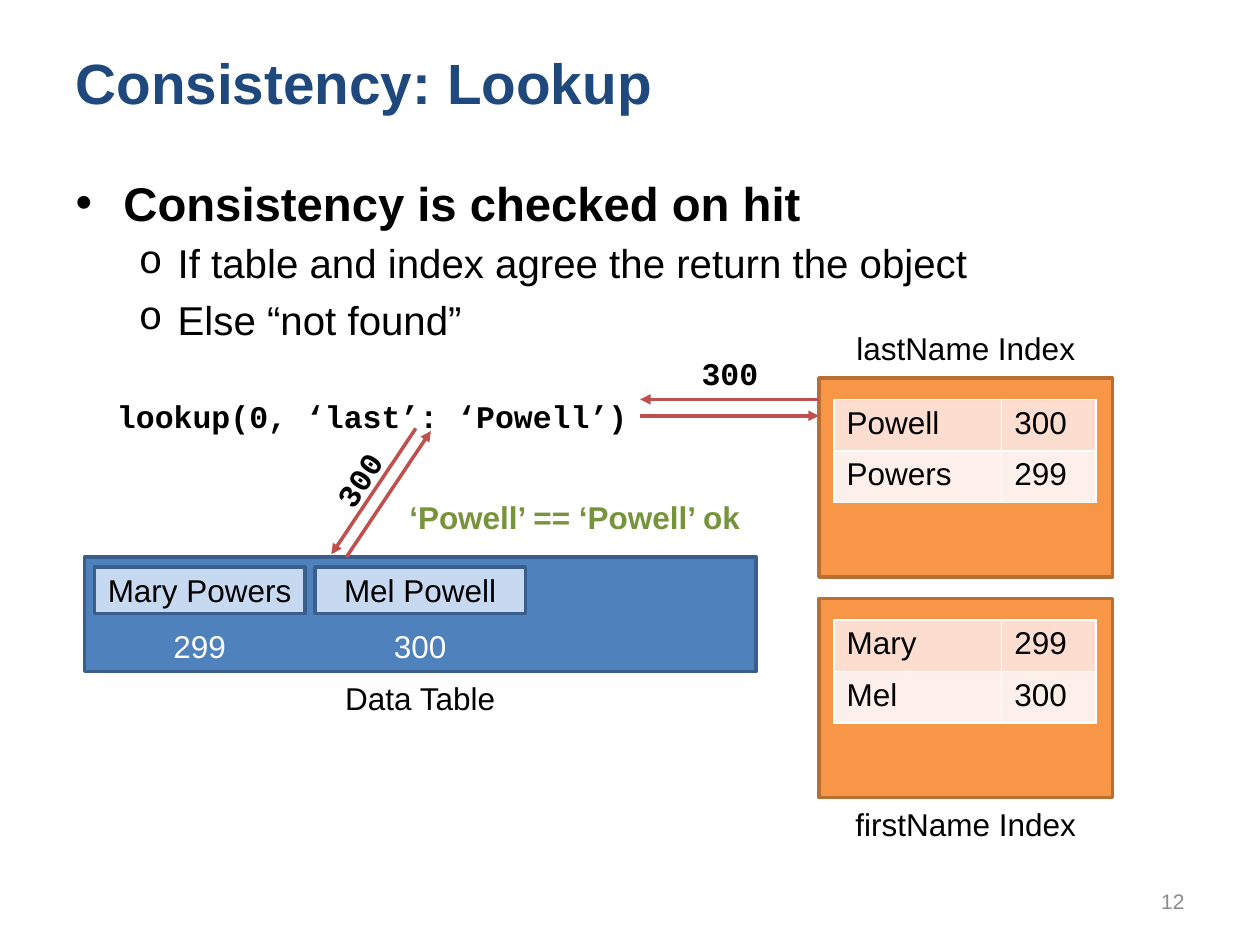
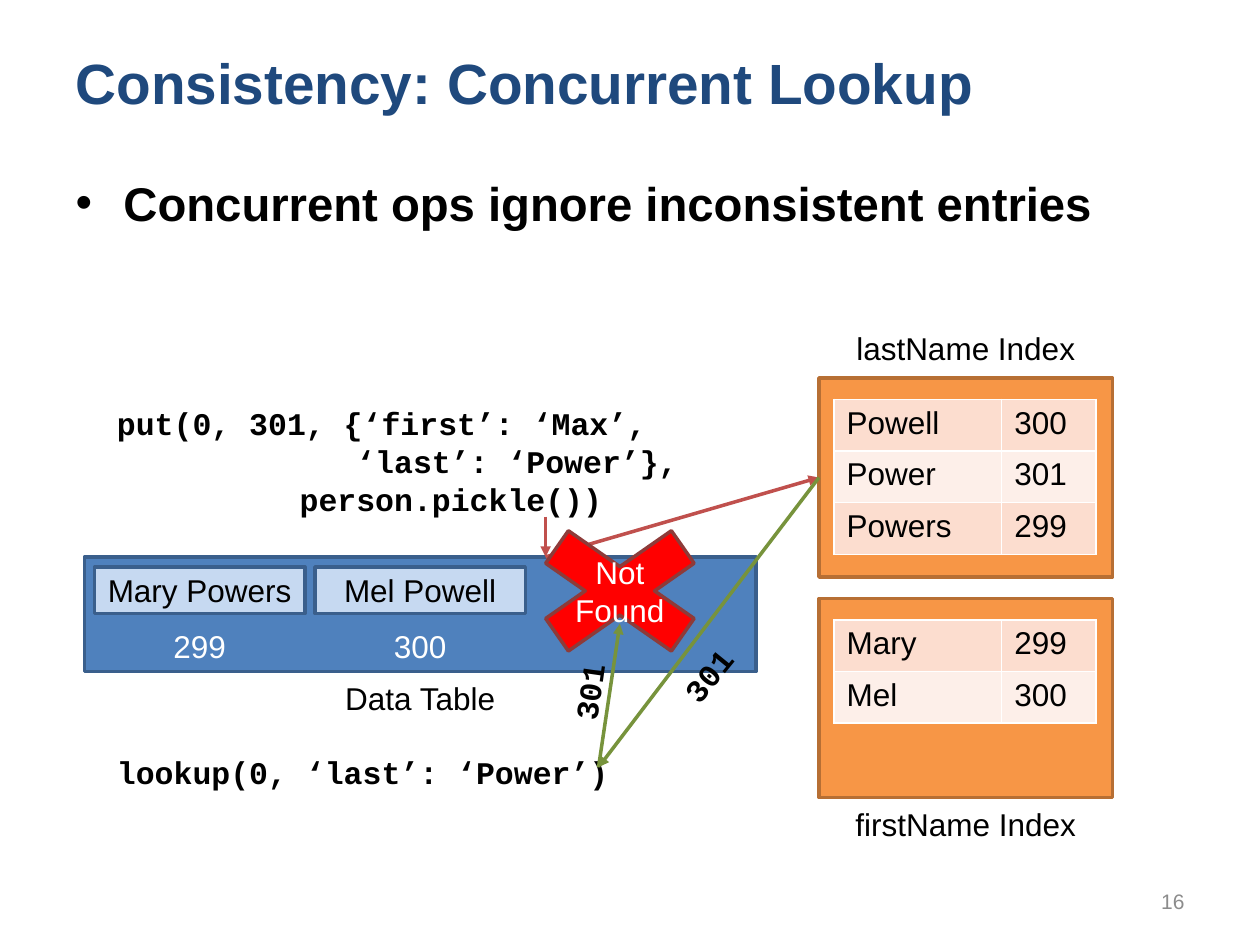
from lxml import etree
from pptx import Presentation
from pptx import util as u
from pptx.dml import color
from pptx.enum import shapes as sh, text as tx
from pptx.oxml import ns

SANS, MONO = "Arial", "Courier New"
NAVY, BLACK, WHITE, GREY = "1F497D", "000000", "FFFFFF", "8C8C8C"
BLUE, EDGE, PALE = "4F81BD", "3A5F8C", "C6D9F1"
ORANGE, RUST = "F79646", "B76F34"
RED, GREEN = "C0504D", "77933C"
BANDS = ["FCDDCF", "FDEFE9"]
LEFT, MID, RIGHT = tx.PP_ALIGN.LEFT, tx.PP_ALIGN.CENTER, tx.PP_ALIGN.RIGHT
PLAIN = {"name": SANS, "size": u.Pt(18), "bold": False}
CODE = {"name": MONO, "size": u.Pt(18), "bold": True}
LEVELS = [
    {"size": 27, "bold": True, "mark": "•", "left": 0.38, "hang": 0.38},
    {"size": 23, "bold": False, "mark": "o", "left": 0.81, "hang": 0.31},
]


def tint(part, hex_code):
    part.rgb = color.RGBColor.from_string(hex_code)


def apply(part, values):
    for key, value in values.items():
        setattr(part, key, value)


def place(part, box):
    sides = ("left", "top", "width", "height")
    apply(part, {side: u.Inches(n) for side, n in zip(sides, box)})


def paint(part, hex_code):
    part.fill.solid()
    tint(part.fill.fore_color, hex_code)


def ink(para, font, hex_code, align=LEFT):
    para.alignment = align
    for run in para.runs:
        apply(run.font, font)
        tint(run.font.color, hex_code)


def fill_text(part, words, font=PLAIN, hue=BLACK, align=LEFT, wrap=True,
              anchor=tx.MSO_ANCHOR.TOP):
    frame = part.text_frame
    apply(frame, {"text": words, "word_wrap": wrap, "vertical_anchor": anchor})
    for para in frame.paragraphs:
        ink(para, font, hue, align)


def label(parts, words, box, turn=0, **style):
    note = parts.add_textbox(*map(u.Inches, box))
    note.rotation = turn
    fill_text(note, words, **style)
    return note


def block(parts, box, fill, edge, words="", hue=BLACK,
          kind=sh.MSO_SHAPE.RECTANGLE):
    form = parts.add_shape(kind, *map(u.Inches, box))
    form.shadow.inherit = False
    paint(form, fill)
    tint(form.line.color, edge)
    form.line.width = u.Pt(2)
    if words:
        fill_text(form, words, hue=hue, align=MID, anchor=tx.MSO_ANCHOR.MIDDLE)


def arrow(parts, start, end, hue=RED):
    link = parts.add_connector(sh.MSO_CONNECTOR.STRAIGHT,
                               *map(u.Inches, start + end))
    tint(link.line.color, hue)
    link.line.width = u.Pt(2)
    props = link._element.spPr
    tip = etree.SubElement(props.find(ns.qn("a:ln")), ns.qn("a:tailEnd"))
    tip.set("type", "triangle")
    etree.SubElement(props, ns.qn("a:effectLst"))


def border(cell):
    props = cell._tc.get_or_add_tcPr()
    for spot, side in enumerate(("lnL", "lnR", "lnT", "lnB")):
        line = etree.Element(ns.qn("a:" + side), w=str(u.Pt(1)))
        solid = etree.SubElement(line, ns.qn("a:solidFill"))
        etree.SubElement(solid, ns.qn("a:srgbClr"), val=WHITE)
        props.insert(spot, line)


def grid(parts, x, y, rows):
    wide, tall = (1.33, 0.75), 0.41
    box = (x, y, sum(wide), tall * len(rows))
    table = parts.add_table(len(rows), 2, *map(u.Inches, box)).table
    apply(table, {"first_row": False, "horz_banding": False})
    for col, width in zip(table.columns, wide):
        col.width = u.Inches(width)
    for r, row in enumerate(rows):
        for c, words in enumerate(row):
            cell = table.cell(r, c)
            cell.text = words
            ink(cell.text_frame.paragraphs[0], PLAIN, BLACK)
            paint(cell, BANDS[r % 2])
            border(cell)


def index(parts, name, y, name_y, rows):
    x, width = 6.5, 2.33
    block(parts, (x, y, width, 1.58), ORANGE, RUST)
    grid(parts, x + 0.12, y + 0.17, rows)
    label(parts, name, (x, name_y, width, 0.4), align=MID)


def store(parts, x, y):
    group = parts.add_group_shape().shapes
    block(group, (x, y, 5.33, 0.91), BLUE, EDGE)
    label(group, "Data Table", (x, y + 0.92, 5.33, 0.4), align=MID)
    for n, (name, key) in enumerate([("Mary Powers", "299"),
                                     ("Mel Powell", "300")]):
        left = x + 0.08 + 1.75 * n
        block(group, (left, y + 0.08, 1.67, 0.37), PALE, EDGE, name)
        label(group, key, (left, y + 0.51, 1.67, 0.4), hue=WHITE, align=MID)


def bullet(para, words, level):
    style = LEVELS[level]
    para.level = level
    para.text = words
    ink(para, {"name": SANS, "size": u.Pt(style["size"]),
               "bold": style["bold"]}, BLACK)
    props = para._p.get_or_add_pPr()
    props.set("marL", str(u.Inches(style["left"])))
    props.set("indent", str(-u.Inches(style["hang"])))
    face = SANS if level == 0 else MONO
    etree.SubElement(props, ns.qn("a:buFont"), typeface=face)
    etree.SubElement(props, ns.qn("a:buChar"), char=style["mark"])


def frame(deck, title, points, number, last):
    slide = deck.slides.add_slide(deck.slide_layouts[1])
    parts = slide.shapes
    head, body = parts.title, slide.placeholders[1]
    place(head, (0.5, 0.3, 9, 0.7))
    fill_text(head, title, {"name": SANS, "size": u.Pt(32.4), "bold": True},
              NAVY, anchor=tx.MSO_ANCHOR.MIDDLE)
    place(body, (0.5, 1.33, 9, 5.37))
    for part in (head, body):
        part.text_frame.auto_size = tx.MSO_AUTO_SIZE.NONE
    for n, (words, level) in enumerate(points):
        text = body.text_frame
        bullet(text.add_paragraph() if n else text.paragraphs[0], words, level)
    label(parts, number, (7.17, 6.95, 2.33, 0.4),
          font={"name": SANS, "size": u.Pt(12)}, hue=GREY, align=RIGHT,
          anchor=tx.MSO_ANCHOR.MIDDLE)
    store(parts, 0.67, 4.42)
    index(parts, "lastName Index", 3, 2.56, last)
    index(parts, "firstName Index", 4.75, 6.34,
          [("Mary", "299"), ("Mel", "300")])
    return parts


def lookup(deck):
    parts = frame(deck, "Consistency: Lookup", [
        ("Consistency is checked on hit", 0),
        ("If table and index agree the return the object", 1),
        ("Else “not found”", 1),
    ], "12", [("Powell", "300"), ("Powers", "299")])
    label(parts, "lookup(0, ‘last’: ‘Powell’)", (0.83, 3.1, 4.42, 0.4),
          font=CODE)
    for start, end in [((5.08, 3.3), (6.5, 3.3)), ((6.5, 3.17), (5.08, 3.17)),
                       ((3.3, 3.4), (2.63, 4.4)), ((2.75, 4.42), (3.42, 3.42))]:
        arrow(parts, start, end)
    label(parts, "‘Powell’ == ‘Powell’ ok", (3.15, 3.9, 2.85, 0.4),
          font={**PLAIN, "bold": True}, hue=GREEN, wrap=False)
    label(parts, "300", (5.47, 2.76, 0.67, 0.4), font=CODE)
    label(parts, "300", (2.52, 3.6, 0.67, 0.4), 303.3, font=CODE)


def race(deck):
    parts = frame(deck, "Consistency: Concurrent Lookup", [
        ("Concurrent ops ignore inconsistent entries", 0),
    ], "16", [("Powell", "300"), ("Power", "301"), ("Powers", "299")])
    lines = ["put(0, 301, {‘first’: ‘Max’,", "‘last’: ‘Power’},",
             "person.pickle())"]
    call = label(parts, "\n".join(lines), (0.83, 3.16, 5.17, 1.01), font=CODE)
    for para, inset in zip(call.text_frame.paragraphs, (0, 1.9, 1.45)):
        para._p.get_or_add_pPr().set("marL", str(u.Inches(inset)))
    label(parts, "lookup(0, ‘last’: ‘Power’)", (0.83, 5.93, 8.33, 0.4),
          font=CODE)
    slot, entry, query = (4.33, 4.42), (6.5, 3.79), (4.75, 6.09)
    arrow(parts, (4.33, 4.1), slot)
    arrow(parts, slot, entry)
    arrow(parts, query, (4.92, 4.95), GREEN)
    block(parts, (3.96, 4.02, 1.92, 1.34), "FF0000", "8E3B39", "Not Found",
          WHITE, sh.MSO_SHAPE.MATH_MULTIPLY)
    arrow(parts, entry, query, GREEN)
    label(parts, "301", (5.29, 5.15, 0.67, 0.4), 309.1, font=CODE)
    label(parts, "301", (4.34, 5.28, 0.67, 0.4), 278.2, font=CODE)


def main():
    deck = Presentation()
    apply(deck, {"slide_width": u.Inches(10), "slide_height": u.Inches(7.5)})
    lookup(deck)
    race(deck)
    deck.save("out.pptx")


if __name__ == "__main__":
    main()
